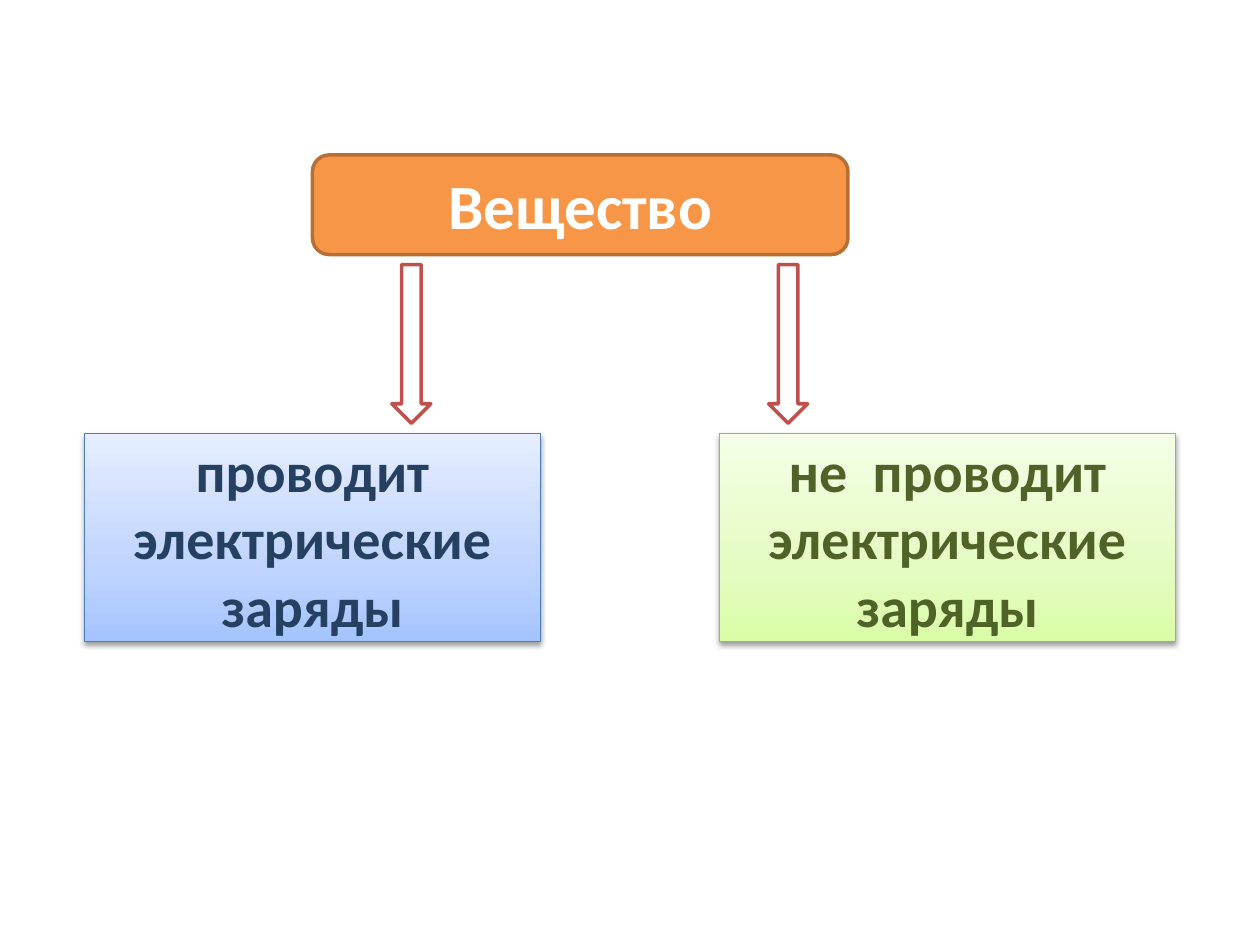
from lxml import etree
from pptx import Presentation
from pptx import util as u
from pptx.dml.color import RGBColor
from pptx.enum import shapes, text
from pptx.oxml import parse_xml
from pptx.oxml.ns import nsdecls, qn

SLIDE_W, SLIDE_H = 10, 7.5
MARGIN, CARD_W = 0.67, 3.62
CARD_TOP, CARD_H = 3.44, 1.65
ARROW_W, ARROW_H = 0.31, 1.26


def color(hex_value):
    return RGBColor.from_string(hex_value)


def add_box(s, kind, box, line, line_width):
    sp = s.shapes.add_shape(kind, *[u.Inches(v) for v in box])
    sp.line.color.rgb = color(line)
    sp.line.width = u.Pt(line_width)
    sp.shadow.inherit = False
    return sp


def set_label(sp, label, size, ink):
    tf = sp.text_frame
    tf.word_wrap = True
    tf.vertical_anchor = text.MSO_ANCHOR.MIDDLE
    tf.text = label
    p = tf.paragraphs[0]
    p.alignment = text.PP_ALIGN.CENTER
    font = p.runs[0].font
    font.name, font.size, font.bold = "Calibri", u.Pt(size), True
    font.color.rgb = color(ink)


def set_gradient(sp, stops):
    """Fill from bottom to top with (percent, colour) stops."""
    sp.fill.gradient()
    sp.fill.gradient_angle = 90
    stop_list = sp._element.spPr.find(qn("a:gradFill")).find(qn("a:gsLst"))
    for old in list(stop_list):
        stop_list.remove(old)
    for percent, hex_value in stops:
        stop = etree.SubElement(stop_list, qn("a:gs"), pos=str(percent * 1000))
        etree.SubElement(stop, qn("a:srgbClr"), val=hex_value)


def add_soft_shadow(sp):
    effects = sp._element.spPr.find(qn("a:effectLst"))
    effects.append(parse_xml(
        f'<a:outerShdw {nsdecls("a")} blurRad="{u.Pt(3.1)}" dist="{u.Pt(1.6)}" '
        'dir="5400000" rotWithShape="0"><a:srgbClr val="000000">'
        '<a:alpha val="38000"/></a:srgbClr></a:outerShdw>'))


def add_heading(s, box):
    sp = add_box(s, shapes.MSO_SHAPE.ROUNDED_RECTANGLE, box, "B76F34", 2)
    sp.fill.solid()
    sp.fill.fore_color.rgb = color("F79646")
    set_label(sp, "Вещество", 36, "FFFFFF")


def add_card(s, box, label, ink, line, stops):
    sp = add_box(s, shapes.MSO_SHAPE.RECTANGLE, box, line, 0.75)
    set_gradient(sp, stops)
    add_soft_shadow(sp)
    set_label(sp, label, 32, ink)


def add_arrow(s, box):
    sp = add_box(s, shapes.MSO_SHAPE.DOWN_ARROW, box, "C0504D", 2)
    sp.fill.solid()
    sp.fill.fore_color.rgb = color("FFFFFF")


def main():
    prs = Presentation()
    prs.slide_width, prs.slide_height = u.Inches(SLIDE_W), u.Inches(SLIDE_H)
    s = prs.slides.add_slide(prs.slide_layouts[6])

    # Root of the scheme
    add_heading(s, (2.48, 1.23, 4.25, 0.79))

    # Two kinds of substance, mirrored about the slide's centre
    cards = [
        (MARGIN, "проводит электрические заряды", "254061", "4B7EBC",
         [(0, "A4C4FF"), (35, "BFD4FF"), (100, "E6EEFF")]),
        (SLIDE_W - MARGIN - CARD_W, "не  проводит электрические заряды",
         "4F6228", "98B955",
         [(0, "DAFDA7"), (35, "E4FCC2"), (100, "F5FFE7")]),
    ]
    for left, *style in cards:
        add_card(s, (left, CARD_TOP, CARD_W, CARD_H), *style)

    # Arrows from the root to the kinds
    for left in (3.11, 6.1):
        add_arrow(s, (left, 2.1, ARROW_W, ARROW_H))

    prs.save("out.pptx")


if __name__ == "__main__":
    main()
